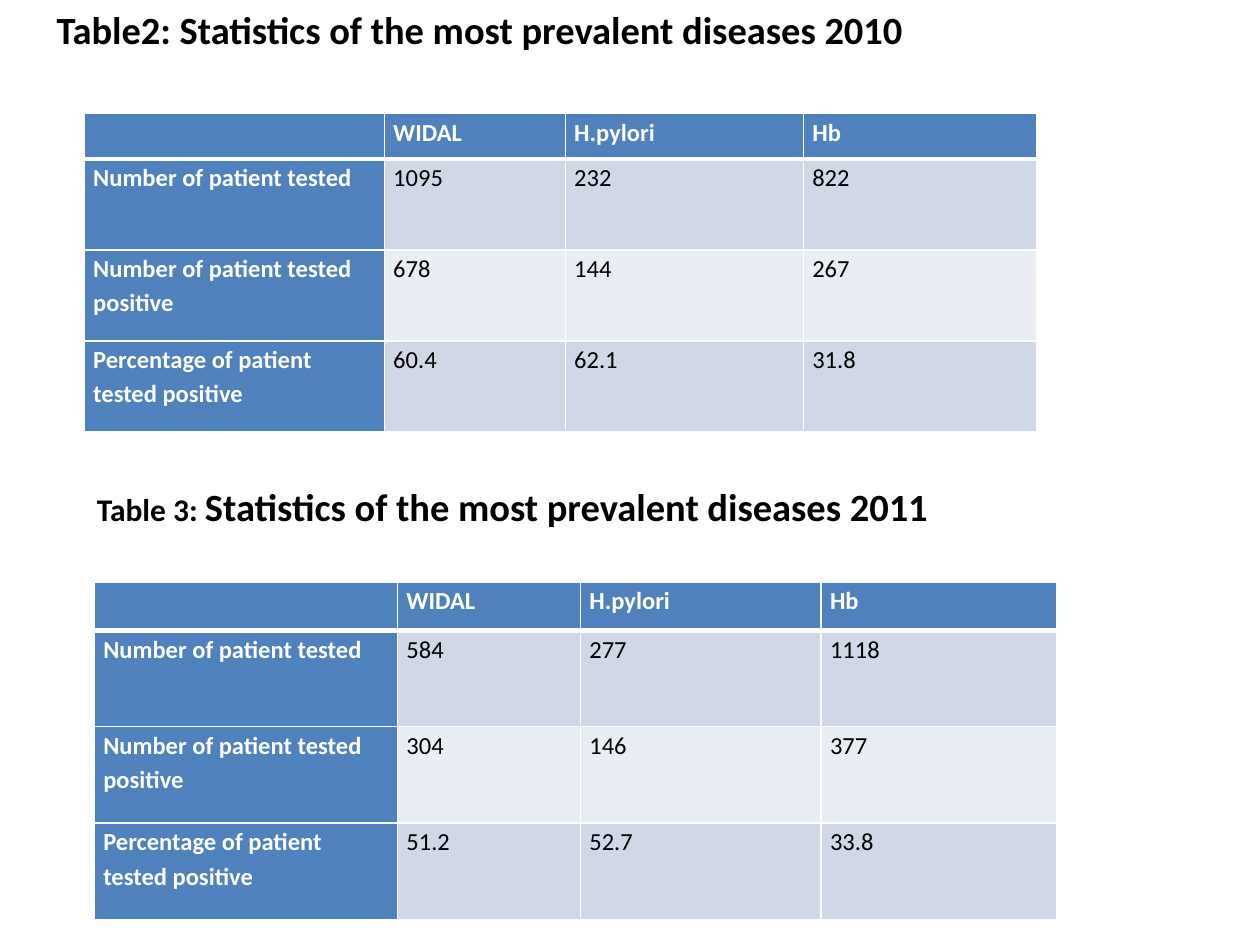
"""Build a slide with two captioned tables of disease statistics."""
from dataclasses import dataclass

from lxml import etree
from pptx import Presentation, util as u
from pptx.dml.color import RGBColor
from pptx.enum import text
from pptx.oxml.ns import qn

COLOURS = {
    "header": "4F81BD",
    "odd": "D0D8E8",
    "even": "E9EDF4",
    "light": "FFFFFF",
    "dark": "000000",
}
FONT = "Calibri"
SLIDE_WIDTH = u.Inches(10)
SLIDE_HEIGHT = u.Inches(7.5)
COLUMN_UNITS = (63, 38, 50, 49)
ROW_UNITS = (1, 2, 2, 2)
TESTS = ("", "WIDAL", "H.pylori", "Hb")
MEASURES = (
    "Number of patient tested",
    "Number of patient tested positive",
    "Percentage of patient tested positive",
)


@dataclass(frozen=True)
class Area:
    """Place and size in percent of the slide."""

    left: float
    top: float
    width: float
    height: float

    def lengths(self) -> tuple[int, ...]:
        """Return left, top, width and height as slide lengths."""
        return (
            int(SLIDE_WIDTH * self.left / 100),
            int(SLIDE_HEIGHT * self.top / 100),
            int(SLIDE_WIDTH * self.width / 100),
            int(SLIDE_HEIGHT * self.height / 100),
        )


@dataclass(frozen=True)
class Statistics:
    """One year's caption and table."""

    caption: tuple[tuple[str, int], ...]
    caption_area: Area
    table_area: Area
    values: tuple[tuple[str, ...], ...]


YEARS = (
    Statistics(
        (("Table2: Statistics of the most prevalent diseases 2010", 22),),
        Area(3.5, 0, 99.1, 11.2),
        Area(6.7, 12, 75.6, 33.7),
        (("1095", "232", "822"), ("678", "144", "267"), ("60.4", "62.1", "31.8")),
    ),
    Statistics(
        (("Table 3: ", 18), ("Statistics of the most prevalent diseases 2011", 22)),
        Area(6.7, 50.5, 69.9, 6.3),
        Area(7.5, 61.6, 76.4, 35.7),
        (("584", "277", "1118"), ("304", "146", "377"), ("51.2", "52.7", "33.8")),
    ),
)


def style_span(span, size: int, colour: str, bold: bool) -> None:
    """Set the font of one run."""
    span.font.name = FONT
    span.font.size = u.Pt(size)
    span.font.bold = bold
    span.font.color.rgb = RGBColor.from_string(COLOURS[colour])


def draw_caption(page, statistics: Statistics) -> None:
    """Add the caption above a table."""
    box = page.shapes.add_textbox(*statistics.caption_area.lengths())
    box.text_frame.word_wrap = True
    box.text_frame.vertical_anchor = text.MSO_ANCHOR.TOP
    para = box.text_frame.paragraphs[0]
    for words, size in statistics.caption:
        span = para.add_run()
        span.text = words
        style_span(span, size, "dark", True)


def set_borders(cell, row: int) -> None:
    """Draw white cell borders, with a thick rule under the header row."""
    properties = cell._tc.get_or_add_tcPr()
    widths = {"L": 1, "R": 1, "T": 3 if row == 1 else 1, "B": 3 if row == 0 else 1}
    for place, (side, width) in enumerate(widths.items()):
        line = etree.Element(qn(f"a:ln{side}"), w=str(u.Pt(width)))
        fill = etree.SubElement(line, qn("a:solidFill"))
        etree.SubElement(fill, qn("a:srgbClr"), val=COLOURS["light"])
        properties.insert(place, line)


def draw_cell(cell, words: str, row: int, column: int) -> None:
    """Fill and format one table cell."""
    heading = row == 0 or column == 0
    band = "header" if heading else "odd" if row % 2 else "even"
    cell.margin_left = cell.margin_right = u.Inches(0.07)
    cell.margin_top = cell.margin_bottom = 0
    cell.fill.solid()
    cell.fill.fore_color.rgb = RGBColor.from_string(COLOURS[band])
    set_borders(cell, row)
    para = cell.text_frame.paragraphs[0]
    para.text = words
    para.line_spacing = 1.15
    for span in para.runs:
        style_span(span, 14, "light" if heading else "dark", heading)


def draw_table(page, statistics: Statistics) -> None:
    """Add the table of one year."""
    left, top, width, height = statistics.table_area.lengths()
    table = page.shapes.add_table(
        len(ROW_UNITS), len(COLUMN_UNITS), left, top, width, height
    ).table
    for column, units in zip(table.columns, COLUMN_UNITS):
        column.width = width * units // sum(COLUMN_UNITS)
    for row, units in zip(table.rows, ROW_UNITS):
        row.height = height * units // sum(ROW_UNITS)
    body = [(name, *values) for name, values in zip(MEASURES, statistics.values)]
    for row, entries in enumerate([TESTS, *body]):
        for column, words in enumerate(entries):
            draw_cell(table.cell(row, column), words, row, column)


def main() -> None:
    """Build and save the deck."""
    deck = Presentation()
    deck.slide_width, deck.slide_height = SLIDE_WIDTH, SLIDE_HEIGHT
    page = deck.slides.add_slide(deck.slide_layouts[6])
    for statistics in YEARS:
        draw_table(page, statistics)
    for statistics in YEARS:
        draw_caption(page, statistics)
    deck.save("out.pptx")


if __name__ == "__main__":
    main()
